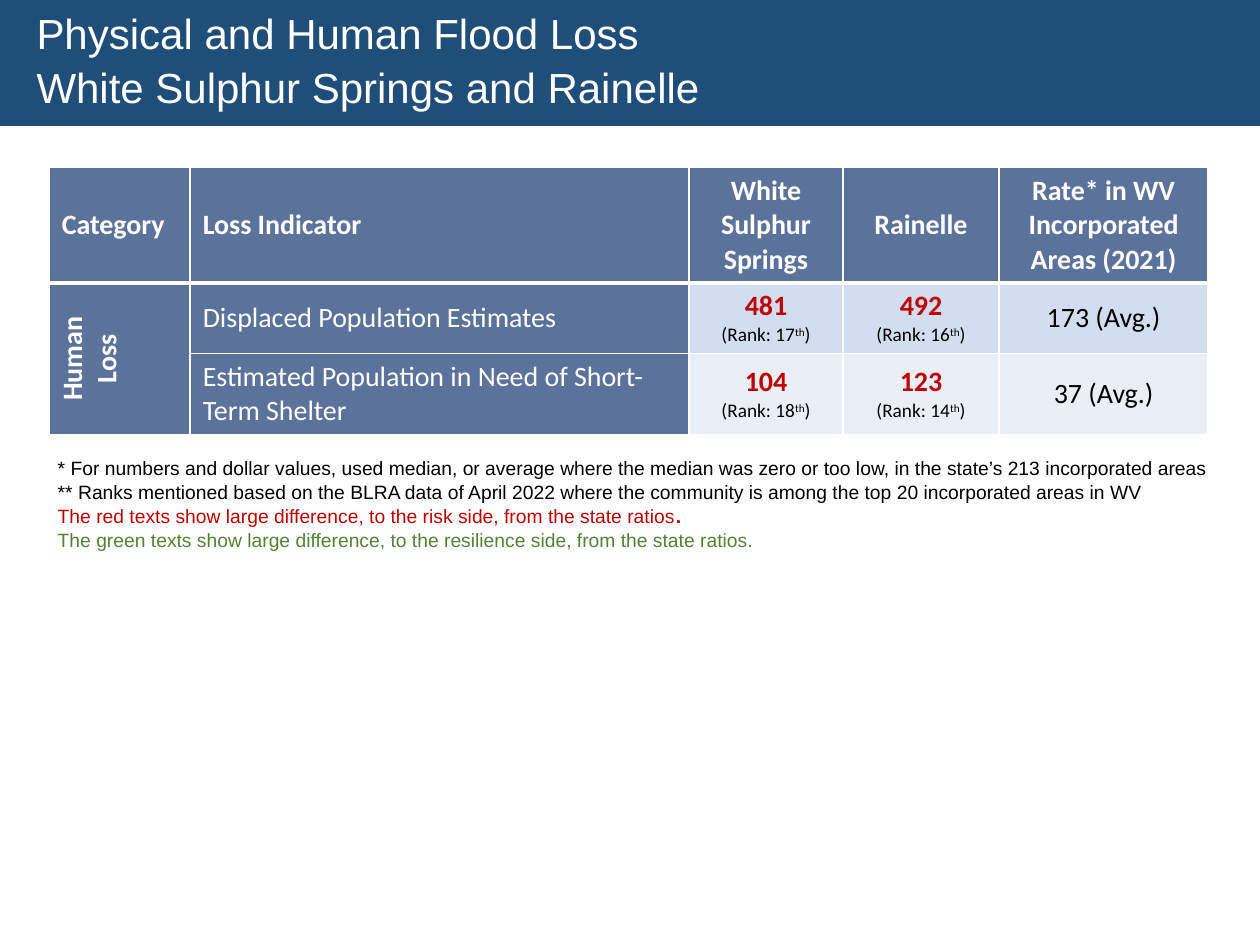
import pptx
import pptx.util
import pptx.dml.color
import pptx.enum.shapes
import pptx.enum.text
import pptx.oxml.ns
import lxml.etree

Inches, Pt = pptx.util.Inches, pptx.util.Pt
ALIGN = pptx.enum.text.PP_ALIGN
MIDDLE = pptx.enum.text.MSO_ANCHOR.MIDDLE

COLORS = {
    "banner": "1F4E79", "header": "5B739B", "band1": "D2DEEF", "band2": "EAEFF7",
    "white": "FFFFFF", "black": "000000", "risk": "C00000", "resilience": "548235",
}
TITLE = ["Physical and Human Flood Loss", "White Sulphur Springs and Rainelle"]
HEADERS = ["Category", "Loss Indicator", "White Sulphur Springs", "Rainelle",
           "Rate* in WV Incorporated Areas (2021)"]
CATEGORY = "Human Loss"
INDICATORS = [
    ("Displaced Population Estimates", [("481", 17), ("492", 16)], "173 (Avg.)", "band1"),
    ("Estimated Population in Need of Short-Term Shelter",
     [("104", 18), ("123", 14)], "37 (Avg.)", "band2"),
]
NOTES = [
    ("* For numbers and dollar values, used median, or average where the median was zero "
     "or too low, in the state’s 213 incorporated areas", "", "black"),
    ("** Ranks mentioned based on the BLRA data of April 2022 where the community is among "
     "the top 20 incorporated areas in WV", "", "black"),
    ("The red texts show large difference, to the risk side, from the state ratios",
     ".", "risk"),
    ("The green texts show large difference, to the resilience side, from the state ratios.",
     "", "resilience"),
]
COL_WIDTHS = [1.12, 3.96, 1.22, 1.24, 1.66]
ROW_HEIGHTS = [0.91, 0.55, 0.64]


def rgb(name):
    return pptx.dml.color.RGBColor.from_string(COLORS[name])


def style(p, font, size, color, bold=False, align=ALIGN.LEFT):
    p.font.name, p.font.size, p.font.bold = font, Pt(size), bold
    p.font.color.rgb = rgb(color)
    p.alignment = align


def add_run(p, text):
    r = p.add_run()
    r.text = text
    return r


def paragraph(tf, i):
    return tf.paragraphs[0] if i == 0 else tf.add_paragraph()


def format_cell(cell, fill, top=1, bottom=1):
    tcPr = cell._tc.get_or_add_tcPr()
    for side, width in (("L", 1), ("R", 1), ("T", top), ("B", bottom)):
        ln = lxml.etree.SubElement(tcPr, pptx.oxml.ns.qn(f"a:ln{side}"), w=str(Pt(width)))
        solid = lxml.etree.SubElement(ln, pptx.oxml.ns.qn("a:solidFill"))
        lxml.etree.SubElement(solid, pptx.oxml.ns.qn("a:srgbClr"), val=COLORS["white"])
    cell.fill.solid()
    cell.fill.fore_color.rgb = rgb(fill)
    cell.vertical_anchor = MIDDLE


def write_cell(cell, text, color, bold=False, align=ALIGN.LEFT):
    p = cell.text_frame.paragraphs[0]
    add_run(p, text)
    style(p, "Calibri", 16, color, bold, align)


def write_rank(cell, rank):
    p = cell.text_frame.add_paragraph()
    style(p, "Calibri", 11, "black", align=ALIGN.CENTER)
    add_run(p, f"(Rank: {rank}")
    add_run(p, "th").font._element.set("baseline", "30000")
    add_run(p, ")")


def add_banner(s):
    sp = s.shapes.add_shape(pptx.enum.shapes.MSO_SHAPE.RECTANGLE, 0, 0, Inches(10), Inches(1))
    sp.shadow.inherit = False
    sp.fill.solid()
    sp.fill.fore_color.rgb = rgb("banner")
    sp.line.fill.background()
    tf = sp.text_frame
    tf.word_wrap = True
    tf.vertical_anchor = MIDDLE
    tf.margin_left = Inches(0.29)
    for i, text in enumerate(TITLE):
        p = paragraph(tf, i)
        add_run(p, text)
        style(p, "Arial", 24, "white")
        p.line_spacing = 0.9
        p.space_before = Pt(5 * i)


def add_loss_table(s):
    table = s.shapes.add_table(len(ROW_HEIGHTS), len(COL_WIDTHS), Inches(0.39), Inches(1.33),
                               Inches(sum(COL_WIDTHS)), Inches(sum(ROW_HEIGHTS))).table
    for col, width in zip(table.columns, COL_WIDTHS):
        col.width = Inches(width)
    for row, height in zip(table.rows, ROW_HEIGHTS):
        row.height = Inches(height)

    for c, text in enumerate(HEADERS):
        format_cell(table.cell(0, c), "header", bottom=3)
        write_cell(table.cell(0, c), text, "white", True, ALIGN.CENTER if c > 1 else ALIGN.LEFT)

    for r, (indicator, towns, rate, band) in enumerate(INDICATORS, 1):
        for c in range(len(COL_WIDTHS)):
            format_cell(table.cell(r, c), "header" if c < 2 else band, top=3 if r == 1 else 1)
        write_cell(table.cell(r, 1), indicator, "white")
        for c, (value, rank) in enumerate(towns, 2):
            write_cell(table.cell(r, c), value, "risk", True, ALIGN.CENTER)
            write_rank(table.cell(r, c), rank)
        write_cell(table.cell(r, 4), rate, "black", align=ALIGN.CENTER)

    category = table.cell(1, 0)
    category.merge(table.cell(len(INDICATORS), 0))
    write_cell(category, CATEGORY, "white", True, ALIGN.CENTER)
    category._tc.get_or_add_tcPr().set("vert", "vert270")


def add_notes(s):
    tf = s.shapes.add_textbox(Inches(0.36), Inches(3.57), Inches(9.65), Inches(1.14)).text_frame
    tf.word_wrap = True
    for i, (text, bold_end, color) in enumerate(NOTES):
        p = paragraph(tf, i)
        add_run(p, text)
        if bold_end:
            add_run(p, bold_end).font.bold = True
        style(p, "Arial", 11, color)
        p.space_before = Pt(0.5)


def main():
    prs = pptx.Presentation()
    prs.slide_width, prs.slide_height = Inches(10), Inches(7.5)
    s = prs.slides.add_slide(prs.slide_layouts[6])
    add_banner(s)
    add_loss_table(s)
    add_notes(s)
    prs.save("out.pptx")


if __name__ == "__main__":
    main()
